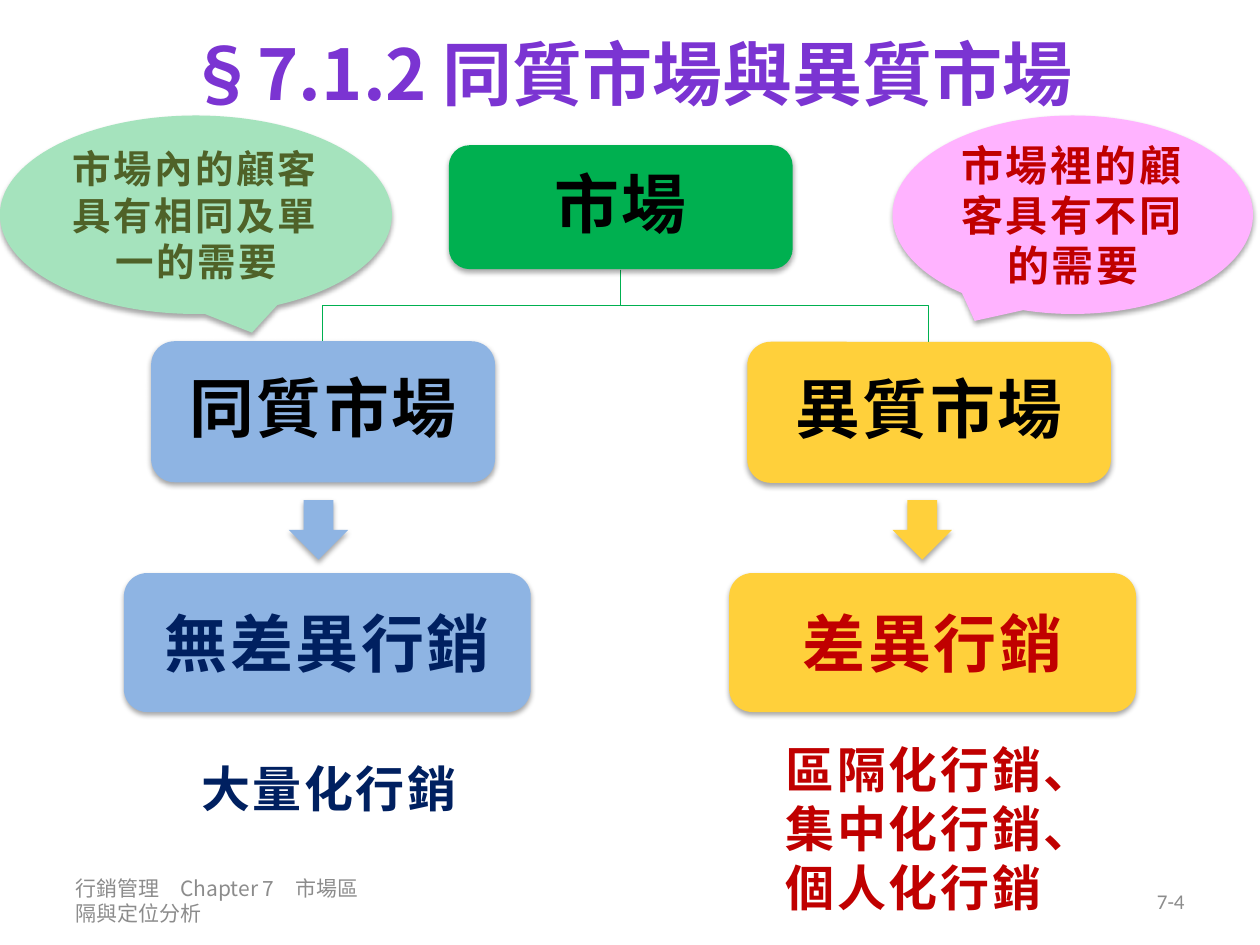
import pptx
import pptx.util
import pptx.dml.color
import pptx.enum.shapes
import pptx.enum.text
import pptx.oxml
import pptx.oxml.ns

Pt = pptx.util.Pt
RGBColor = pptx.dml.color.RGBColor
SHAPE = pptx.enum.shapes.MSO_SHAPE
ALIGN = pptx.enum.text.PP_ALIGN
ANCHOR = pptx.enum.text.MSO_ANCHOR

CJK = "Noto Sans CJK SC"
BLACK = RGBColor(0x00, 0x00, 0x00)
GRAY = RGBColor(0x8C, 0x8C, 0x8C)
PURPLE = RGBColor(0x7B, 0x34, 0xD2)
GREEN = RGBColor(0x00, 0xB0, 0x50)
MINT = RGBColor(0xA5, 0xE3, 0xBD)
OLIVE = RGBColor(0x4F, 0x62, 0x28)
PINK = RGBColor(0xFF, 0xB3, 0xFF)
BLUE = RGBColor(0x8E, 0xB4, 0xE3)
NAVY = RGBColor(0x00, 0x20, 0x60)
YELLOW = RGBColor(0xFF, 0xD0, 0x3B)
RED = RGBColor(0xC0, 0x00, 0x00)

SHADOW = (
    '<a:outerShdw %s blurRad="39370" dist="22860" dir="5400000" rotWithShape="0">'
    '<a:srgbClr val="000000"><a:alpha val="35000"/></a:srgbClr></a:outerShdw>'
    % pptx.oxml.ns.nsdecls("a")
)

presentation = pptx.Presentation()
presentation.slide_width = Pt(720)
presentation.slide_height = Pt(540)
slide = presentation.slides.add_slide(presentation.slide_layouts[6])


def write(holder, words, size, color, align=ALIGN.CENTER, anchor=ANCHOR.MIDDLE,
          bold=True, spacing=150, face=CJK):
    frame = holder.text_frame
    frame.word_wrap = True
    frame.vertical_anchor = anchor
    paragraph = frame.paragraphs[0]
    paragraph.alignment = align
    run = paragraph.add_run()
    run.text = words
    run.font.size = Pt(size)
    run.font.bold = bold
    run.font.name = face
    run.font.color.rgb = color
    properties = run.font._element
    properties.set("spc", str(spacing))
    east_asian = pptx.oxml.parse_xml(
        '<a:ea %s typeface="%s"/>' % (pptx.oxml.ns.nsdecls("a"), face))
    properties.find(pptx.oxml.ns.qn("a:latin")).addnext(east_asian)
    return paragraph


def draw(preset, box, fill):
    shape = slide.shapes.add_shape(preset, *[Pt(length) for length in box])
    shape.fill.solid()
    shape.fill.fore_color.rgb = fill
    shape.line.fill.background()
    shape.shadow.inherit = False
    effects = shape._element.spPr.find(pptx.oxml.ns.qn("a:effectLst"))
    effects.append(pptx.oxml.parse_xml(SHADOW))
    return shape


labels = [
    ((36, 500.4, 176.4, 28.8), "行銷管理　Chapter 7　市場區隔與定位分析", 12, GRAY,
     ALIGN.LEFT, ANCHOR.MIDDLE, False, 0, CJK),
    ((516, 500.4, 168, 28.8), "7-4", 12, GRAY,
     ALIGN.RIGHT, ANCHOR.MIDDLE, False, 0, "Calibri"),
    ((36, 0, 648, 82.5), "§7.1.2 同質市場與異質市場", 40, PURPLE,
     ALIGN.CENTER, ANCHOR.MIDDLE, True, 0, CJK),
    ((108, 430, 181.5, 41), "大量化行銷", 28, NAVY,
     ALIGN.LEFT, ANCHOR.TOP, True, 150, CJK),
    ((442, 419, 181.5, 109), "區隔化行銷、集中化行銷、個人化行銷", 28, RED,
     ALIGN.LEFT, ANCHOR.TOP, True, 150, CJK),
]
for box, *wording in labels:
    write(slide.shapes.add_textbox(*[Pt(length) for length in box]), *wording)

root_x, root_bottom, branch_y, branch_top = 354.75, 154, 174.5, 195.3
for branch_x in (530.75, 184.5):
    builder = slide.shapes.build_freeform(Pt(root_x), Pt(root_bottom))
    builder.add_line_segments(
        [(Pt(root_x), Pt(branch_y)), (Pt(branch_x), Pt(branch_y)),
         (Pt(branch_x), Pt(branch_top))], close=False)
    branch = builder.convert_to_shape()
    branch.fill.background()
    branch.line.color.rgb = GREEN
    branch.line.width = Pt(0.75)
    branch.shadow.inherit = False

markets = [
    ((256.5, 83, 196.5, 70.8), GREEN, "市場"),
    ((86.4, 195, 196.5, 80.6), BLUE, "同質市場"),
    ((427, 195.3, 207.8, 80.6), YELLOW, "異質市場"),
]
for box, fill, words in markets:
    market = draw(SHAPE.ROUNDED_RECTANGLE, box, fill)
    frame = market.text_frame
    frame.margin_left = frame.margin_right = Pt(2)
    frame.margin_top = frame.margin_bottom = Pt(2)
    write(market, words, 37, BLACK).line_spacing = 0.9

callouts = [
    ((0, 66, 224, 113.4), (0.143, 0.594), MINT, "市場內的顧客具有相同及單一的需要", 22, OLIVE),
    ((510, 66, 206, 113.4), (-0.272, 0.535), PINK, "市場裡的顧客具有不同的需要", 24, RED),
]
for box, tip, fill, words, size, color in callouts:
    callout = draw(SHAPE.OVAL_CALLOUT, box, fill)
    callout.adjustments[0], callout.adjustments[1] = tip
    write(callout, words, size, color)

strategies = [
    (165, 70.8, BLUE, "無差異行銷", NAVY),
    (510, 416.7, YELLOW, "差異行銷", RED),
]
for arrow_left, strategy_left, fill, words, color in strategies:
    draw(SHAPE.DOWN_ARROW, (arrow_left, 285.8, 34, 34), fill)
    strategy = draw(SHAPE.ROUNDED_RECTANGLE, (strategy_left, 327.5, 232.5, 79.4), fill)
    write(strategy, words, 36, color)

presentation.save("out.pptx")
